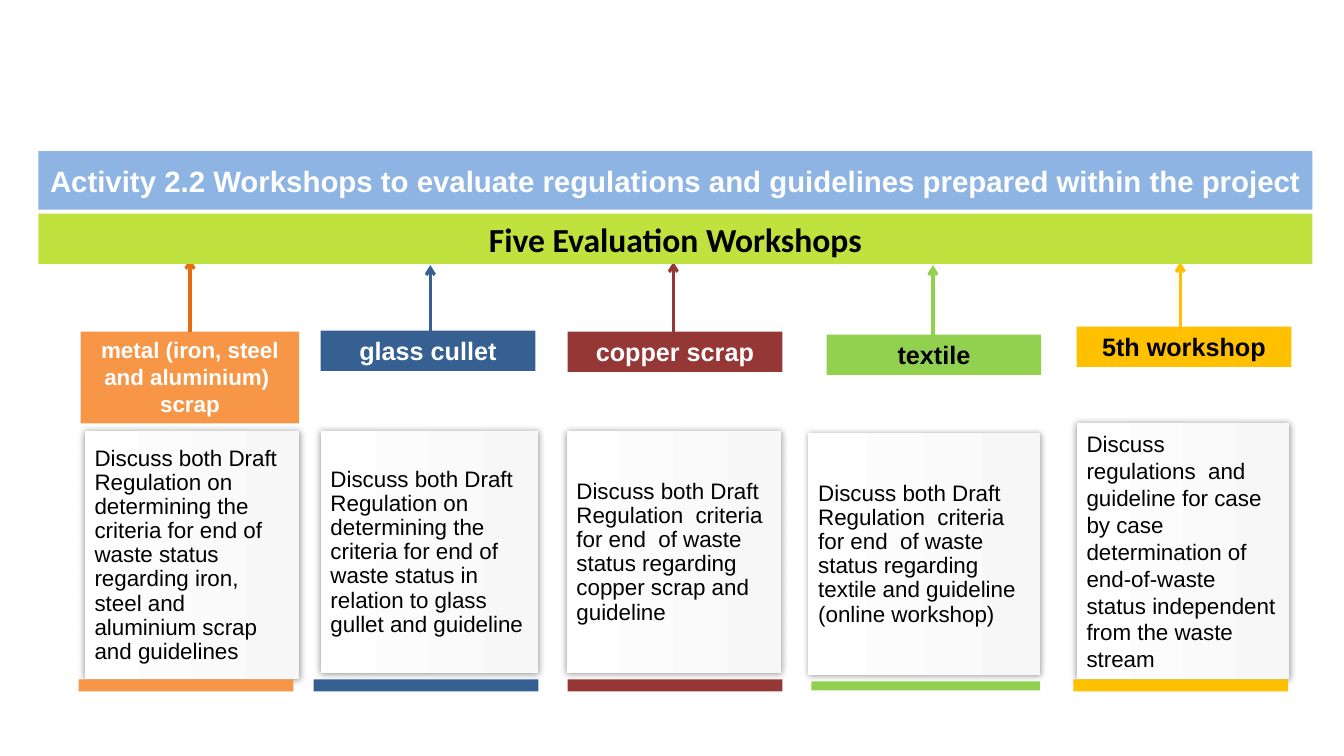
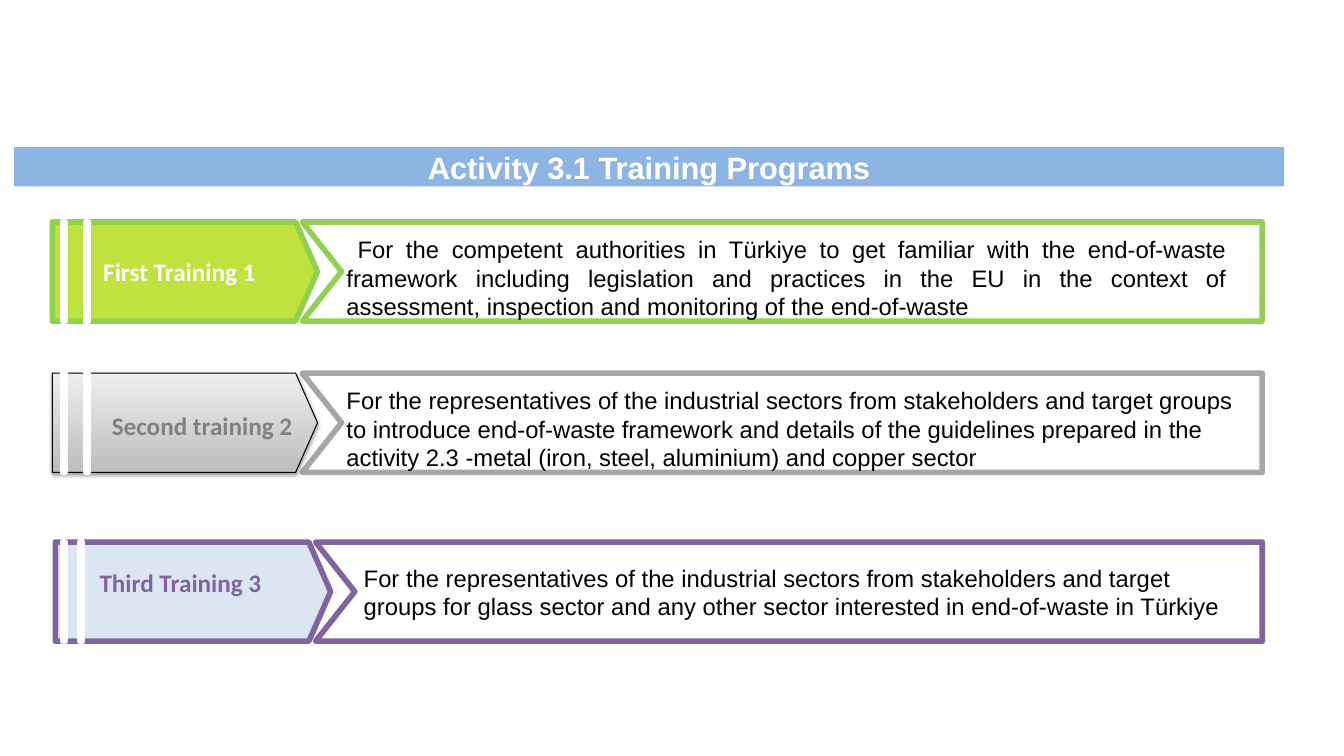
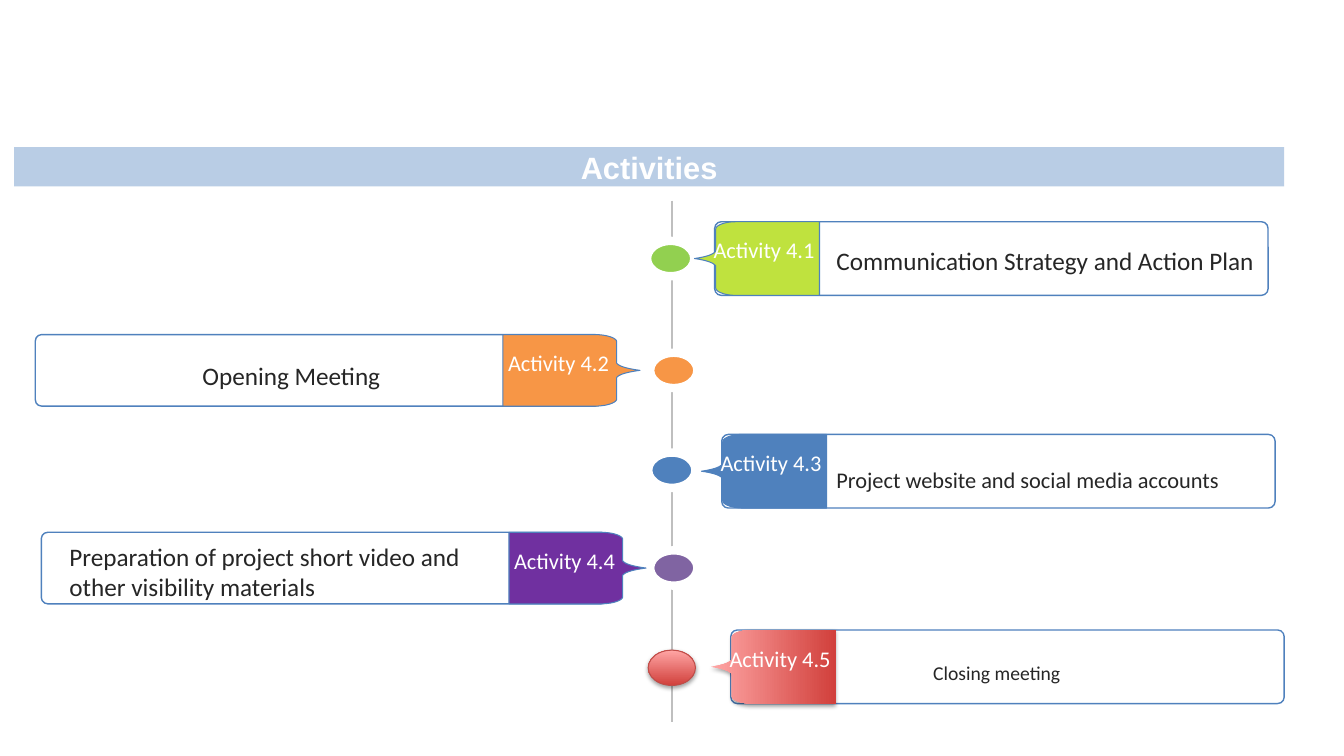
"""Build three slides on project workshops, trainings and visibility activities."""
import collections

import lxml.etree
import pptx
import pptx.chart.data
import pptx.dml.color
import pptx.enum.shapes
import pptx.enum.text
import pptx.oxml.ns
import pptx.util

Pt = pptx.util.Pt
SHAPE = pptx.enum.shapes.MSO_SHAPE
ALIGN = pptx.enum.text.PP_ALIGN
ANCHOR = pptx.enum.text.MSO_ANCHOR
qn = pptx.oxml.ns.qn

COLOURS = {
    "white": "FFFFFF", "black": "000000", "ink": "262626",
    "title": "8EB4E3", "title_pale": "B9CDE5", "lime": "BFE23E",
    "orange": "F79646", "orange_dark": "E46C0A", "navy": "376092",
    "maroon": "953735", "green": "92D050", "gold": "FFC000",
    "smoke": "F7F7F7", "grey": "A6A6A6", "grey_text": "808080",
    "silver": "BDBDBD", "silver_pale": "EEEEEE", "axis": "BFBFBF",
    "purple": "8064A2", "violet": "7030A0", "ice": "DCE6F2",
    "blue": "4F81BD", "red": "D1403C", "pink": "FFA6A5", "red_edge": "BF4C48",
}
TITLE_BOX = (10.1, 105.1, 907.2, 28.1)
GLOW = (40, 5, 0, 0)
DROP = (36, 3.1, 1.7, 90)

Column = collections.namedtuple(
    "Column", "head fill edge ink title size arrow_x tip body spacing text foot")
Training = collections.namedtuple(
    "Training", "box plate_width plate plate_line edge stripes label ink label_box text text_box align indent")
Activity = collections.namedtuple(
    "Activity", "card on_right fill label text size text_box spacing dot dot_fill")


def rgb(name):
    """Return the named colour."""
    return pptx.dml.color.RGBColor.from_string(COLOURS[name])


def paint(shape, fill=None, line=None, shadow=None):
    """Set fill (name or start, end, angle), line (name, width) and shadow."""
    if fill is None:
        shape.fill.background()
    elif isinstance(fill, tuple):
        start, end, angle = fill
        shape.fill.gradient()
        shape.fill.gradient_angle = angle
        for stop, name in zip(shape.fill.gradient_stops, (start, end)):
            stop.color.rgb = rgb(name)
    else:
        shape.fill.solid()
        shape.fill.fore_color.rgb = rgb(fill)
    if line:
        shape.line.color.rgb = rgb(line[0])
        shape.line.width = Pt(line[1])
    else:
        shape.line.fill.background()
    shape.shadow.inherit = False
    if shadow:
        opacity, blur, distance, angle = shadow
        effects = shape._element.spPr.find(qn("a:effectLst"))
        outer = lxml.etree.SubElement(
            effects, qn("a:outerShdw"), blurRad=str(Pt(blur)), dist=str(Pt(distance)),
            dir=str(angle * 60000), rotWithShape="0")
        colour = lxml.etree.SubElement(outer, qn("a:srgbClr"), val=COLOURS["black"])
        lxml.etree.SubElement(colour, qn("a:alpha"), val=str(opacity * 1000))


def write(shape, text, size, ink="black", font="Arial", bold=False, align=ALIGN.LEFT,
          anchor=ANCHOR.TOP, spacing=None, indent=0, wrap=True):
    """Fill the shape with one paragraph for each line of text."""
    frame = shape.text_frame
    frame.word_wrap = wrap
    frame.vertical_anchor = anchor
    for index, line in enumerate(text.split("\n")):
        para = frame.add_paragraph() if index else frame.paragraphs[0]
        para.alignment = align
        if spacing:
            para.line_spacing = spacing
        if indent:
            para._p.get_or_add_pPr().set("indent", str(Pt(indent)))
        span = para.add_run()
        span.text = line
        span.font.name = font
        span.font.size = Pt(size)
        span.font.bold = bold
        span.font.color.rgb = rgb(ink)


def add_block(page, kind, box, fill=None, line=None, shadow=None):
    """Add a painted preset shape."""
    shape = page.shapes.add_shape(kind, *map(Pt, box))
    paint(shape, fill, line, shadow)
    return shape


def add_text(page, box, text, size, **style):
    """Add a text box."""
    write(page.shapes.add_textbox(*map(Pt, box)), text, size, **style)


def add_outline(page, points, fill, line=None, shadow=None):
    """Add a closed painted outline through the points."""
    corners = [(Pt(x), Pt(y)) for x, y in points]
    builder = page.shapes.build_freeform(*corners[0])
    builder.add_line_segments(corners[1:], close=True)
    paint(builder.convert_to_shape(), fill, line, shadow)


def add_line(page, start, end, colour, width, arrow=False):
    """Add a straight line, with an arrowhead at its end if wanted."""
    line = page.shapes.add_connector(
        pptx.enum.shapes.MSO_CONNECTOR.STRAIGHT, *map(Pt, start + end))
    line.line.color.rgb = rgb(colour)
    line.line.width = Pt(width)
    if arrow:
        lxml.etree.SubElement(line.line._get_or_add_ln(), qn("a:tailEnd"), type="arrow")
    lxml.etree.SubElement(line._element.spPr, qn("a:effectLst"))


def add_title(page, text, box=TITLE_BOX, fill="title", size=22):
    """Add the title band of a slide."""
    band = add_block(page, SHAPE.RECTANGLE, box, fill)
    write(band, text, size, "white", bold=True, align=ALIGN.CENTER, anchor=ANCHOR.MIDDLE)


def add_column(page, column):
    """Add one workshop: heading with arrow, description and foot bar."""
    left, top, width, height = column.head
    head = add_block(page, SHAPE.RECTANGLE, column.head, column.fill)
    write(head, column.title, column.size, column.ink, bold=True, align=ALIGN.CENTER)
    middle = left + width / 2 + column.arrow_x
    add_line(page, (middle, top), (middle, column.tip), column.edge, 2.25, arrow=True)
    dx, dy, body_width, body_height = column.body
    body = add_block(page, SHAPE.RECTANGLE, (left + dx, top + dy, body_width, body_height),
                     ("smoke", "white", 180), shadow=GLOW)
    write(body, column.text, 16, anchor=ANCHOR.MIDDLE, spacing=column.spacing)
    dx, dy, foot_width, foot_height = column.foot
    add_block(page, SHAPE.RECTANGLE, (left + dx, top + dy, foot_width, foot_height), column.fill)


def add_training(page, training):
    """Add one training: notched frame, pentagon with stripes, label and text."""
    left, top, width, height = training.box
    right, bottom, notch = left + width, top + height, 28
    start = left + training.plate_width - 10.8
    add_outline(page, [(start, top), (right, top), (right, bottom), (start, bottom),
                       (start + notch, top + height / 2)], "white", (training.edge, 4))
    gradient = isinstance(training.plate, tuple)
    plate = add_block(page, SHAPE.PENTAGON, (left, top, training.plate_width, height),
                      training.plate, training.plate_line, DROP if gradient else None)
    plate.adjustments[0] = 0.22
    for dx in training.stripes:
        add_block(page, SHAPE.RECTANGLE, (left + dx, top, 2, height), "white", ("white", 4))
    style = dict(ink=training.ink, font="Calibri", bold=True, align=ALIGN.CENTER)
    if training.label_box:
        dx, dy, label_width = training.label_box
        add_text(page, (left + dx, top + dy, label_width, 28.8), training.label, 18,
                 wrap=False, **style)
    else:
        write(plate, training.label, 18, anchor=ANCHOR.MIDDLE, **style)
    dx, dy, text_width, text_height = training.text_box
    add_text(page, (left + dx, top + dy, text_width, text_height), training.text, 17,
             align=training.align, indent=training.indent)


def bend(start, first, second, end, steps=10):
    """Return points along a cubic curve, without its start."""
    points = []
    for step in range(1, steps + 1):
        t = step / steps
        weights = ((1 - t) ** 3, 3 * t * (1 - t) ** 2, 3 * t * t * (1 - t), t ** 3)
        points.append(tuple(sum(weight * point[axis] for weight, point in
                                zip(weights, (start, first, second, end))) for axis in (0, 1)))
    return points


def tag_points(box, points_left):
    """Return the outline of a tag whose tip points left or right."""
    left, top, width, height = box
    upper = [(1, 0), (0.33, 0)]
    upper += bend((0.33, 0), (0.24, 0), (0.17, 0.05), (0.17, 0.1))
    upper += [(0.17, 0.4)]
    upper += bend((0.17, 0.4), (0.15, 0.45), (0.08, 0.48), (0, 0.5))
    lower = [(x, 1 - y) for x, y in reversed(upper[:-1])]
    return [(left + width * (x if points_left else 1 - x), top + height * y)
            for x, y in upper + lower]


def add_activity(page, activity):
    """Add one activity: dot on the axis, card, tag and text."""
    left, top = activity.card
    width, height, tag_width = (395.3, 52.6, 89.3) if activity.on_right else (404.6, 51.1, 97.9)
    tag_left = left - 14.4 if activity.on_right else left + width + 27.4 - tag_width
    label_left = tag_left + (5 if activity.on_right else -5)
    gradient = isinstance(activity.fill, tuple)
    shadow = DROP if gradient else None
    add_block(page, SHAPE.OVAL, (*activity.dot, 33.8, 25.2), activity.dot_fill,
              ("red_edge", 0.75) if gradient else ("white", 6), shadow)
    card = add_block(page, SHAPE.ROUNDED_RECTANGLE, (left, top, width, height), line=("blue", 1))
    card.adjustments[0] = 0.09
    add_outline(page, tag_points((tag_left, top, tag_width, height), activity.on_right),
                activity.fill, None if gradient else ("blue", 0.75), shadow)
    add_text(page, (label_left, top + 7, 89.3, 26.6), activity.label, 16,
             ink="white", font="Calibri", align=ALIGN.CENTER)
    dx, dy, text_width, text_height = activity.text_box
    add_text(page, (left + dx, top + dy, text_width, text_height), activity.text,
             activity.size, ink="ink", font="Calibri", spacing=activity.spacing)


COLUMNS = [
    Column((57.6, 236.9, 156.2, 65.5), "orange", "orange_dark", "white",
           "metal (iron, steel and aluminium)  scrap", 16, 0, 185, (2.9, 71.3, 153.4, 177.1), 0.9,
           "Discuss both Draft Regulation on determining the criteria for end of waste status "
           "regarding iron, steel and aluminium scrap and guidelines", (-1.4, 248.4, 153.4, 8.6)),
    Column((229, 236.2, 153.4, 28.8), "navy", "navy", "white", "glass cullet", 18, 1.7, 189.4,
           (0, 72, 155.5, 172.8), 0.9,
           "Discuss both Draft Regulation on determining the criteria for end of waste status "
           "in relation to glass gullet and guideline", (-5, 249.1, 160.6, 8.6)),
    Column((405.4, 236.9, 153.4, 28.8), "maroon", "maroon", "white", "copper scrap", 18, -1.1,
           187.2, (-0.7, 71.3, 153.4, 172.8), 0.9,
           "Discuss both Draft Regulation  criteria for end  of waste status regarding copper "
           "scrap and guideline", (0, 248.4, 153.4, 8.6)),
    Column((590.4, 239, 153.4, 28.8), "green", "green", "black", "textile", 18, -0.7, 189.4,
           (-13, 70.6, 165.6, 172.8), 0.9,
           "Discuss both Draft Regulation  criteria for end  of waste status regarding textile "
           "and guideline\n(online workshop)", (-10.8, 247.7, 163.4, 6.5)),
    Column((769, 233.3, 153.4, 28.8), "gold", "gold", "black", "5th workshop", 18, -2.6, 187.2,
           (0, 69.1, 151.9, 182.9), None,
           "Discuss regulations  and guideline for case by case determination of end-of-waste "
           "status independent from the waste stream", (-2.2, 252, 153.4, 8.6)),
]

TRAININGS = [
    Training((37.4, 158.6, 864.2, 70.8), 189.4, "lime", ("green", 4), "green", (7.2, 23.8),
             "First Training 1", "white", None,
             "For the competent authorities in Türkiye to get familiar with the end-of-waste "
             "framework including legislation and practices in the EU in the context of "
             "assessment, inspection and monitoring of the end-of-waste",
             (203, 5.6, 643, 69.1), ALIGN.JUSTIFY, 8),
    Training((37.4, 266.6, 864.2, 70.8), 189.4, ("silver", "silver_pale", 90), ("black", 0.75),
             "grey", (7.2, 23.8), "Second training 2", "grey_text", (34.6, 22.8, 144.7),
             "For the representatives of the industrial sectors from stakeholders and target "
             "groups to introduce end-of-waste framework and details of the guidelines prepared "
             "in the activity 2.3 -metal (iron, steel, aluminium) and copper sector",
             (203, 5.6, 661, 69.1), ALIGN.LEFT, 0),
    Training((39.6, 387.2, 862, 70.8), 196.6, "ice", ("purple", 4), "purple", (5, 17.3),
             "Third Training 3", "purple", (23.8, 14.5, 131),
             "For the representatives of the industrial sectors from stakeholders and target "
             "groups for glass sector and any other sector interested in end-of-waste in Türkiye",
             (213.1, 11.7, 627.8, 48.2), ALIGN.LEFT, 0),
]

ACTIVITIES = [
    Activity((510.5, 158.4), True, "lime", "Activity 4.1",
             "Communication Strategy and Action Plan", 18, (79.9, 6.5, 333.4, 35.3), 1.3,
             (462.2, 172.1), "green"),
    Activity((25.2, 239), False, "orange", "Activity 4.2", "Opening Meeting", 18,
             (112.3, 8, 157.7, 35.3), 1.3, (464.4, 252), "orange"),
    Activity((515.5, 310.3), True, "blue", "Activity 4.3",
             "Project website and social media accounts", 16, (74.9, 13, 290.9, 32.4), 1.3,
             (463, 323.3), "blue"),
    Activity((29.5, 380.2), False, "violet", "Activity 4.4",
             "Preparation of project short video and other visibility materials", 18,
             (13, 2.9, 320.4, 51.1), None, (464.4, 393.1), "purple"),
    Activity((522, 450), True, ("pink", "red", 0), "Activity 4.5", "Closing meeting", 14,
             (137.5, 13.7, 169.9, 29.5), 1.3, (463, 464.4), ("red", "pink", 90)),
]


def build_workshops(page):
    """Build the slide of the five evaluation workshops."""
    for column in COLUMNS:
        add_column(page, column)
    add_title(page, "Activity 2.2 Workshops to evaluate regulations and guidelines prepared "
              "within the project", (27.4, 108, 910.1, 41.8), size=21)
    band = add_block(page, SHAPE.RECTANGLE, (27.4, 152.6, 910.1, 36), "lime")
    write(band, "Five Evaluation Workshops", 24, font="Calibri", bold=True, align=ALIGN.CENTER)


def build_trainings(page):
    """Build the slide of the training programs."""
    for training in TRAININGS:
        add_training(page, training)
    add_title(page, "Activity 3.1 Training Programs")


def build_activities(page):
    """Build the timeline slide of the activities."""
    add_line(page, (480.2, 143.3), (480.2, 515.5), "axis", 1.5)
    for activity in ACTIVITIES:
        add_activity(page, activity)
    add_title(page, "Activities", fill="title_pale")


def main():
    """Build and save the deck."""
    deck = pptx.Presentation()
    deck.slide_width, deck.slide_height = Pt(960), Pt(540)
    for build in (build_workshops, build_trainings, build_activities):
        build(deck.slides.add_slide(deck.slide_layouts[6]))
    deck.save("out.pptx")


if __name__ == "__main__":
    main()
